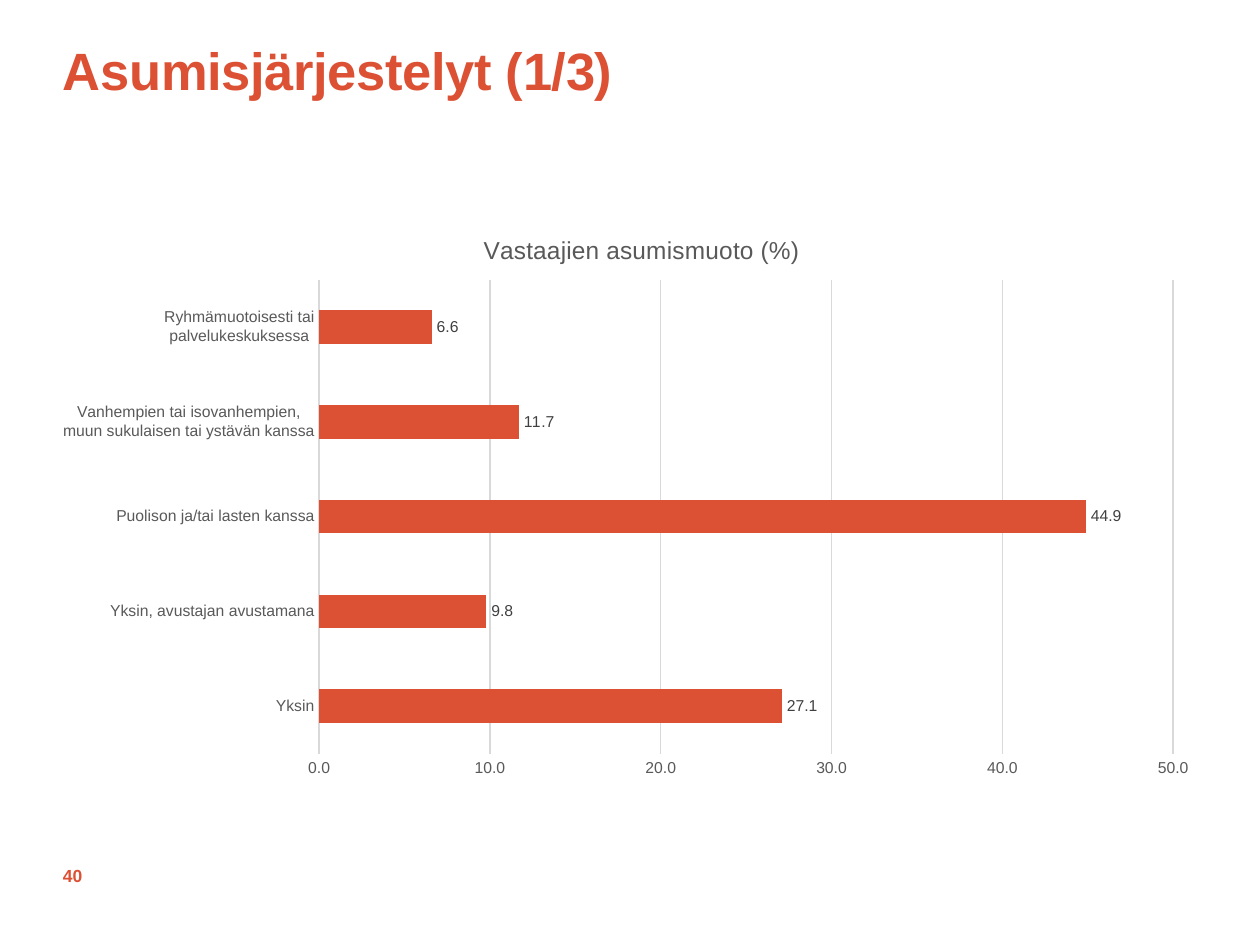
from lxml.etree import SubElement
from pptx import Presentation
from pptx.chart.data import CategoryChartData
from pptx.dml.color import RGBColor
from pptx.enum.chart import XL_CHART_TYPE, XL_LABEL_POSITION, XL_TICK_MARK
from pptx.enum.text import MSO_ANCHOR
from pptx.oxml import parse_xml
from pptx.oxml.ns import nsdecls, qn
from pptx.util import Cm, Pt

ORANGE = RGBColor(0xDC, 0x50, 0x34)
BLACK = RGBColor(0, 0, 0)
DARK_GREY = RGBColor(0x40, 0x40, 0x40)
GREY = RGBColor(0x59, 0x59, 0x59)
LIGHT_GREY = RGBColor(0xD9, 0xD9, 0xD9)

HOUSING = [
    ("Yksin", 27.1),
    ("Yksin, avustajan avustamana", 9.8),
    ("Puolison ja/tai lasten kanssa", 44.9),
    ("Vanhempien tai isovanhempien, muun sukulaisen tai ystävän kanssa", 11.7),
    ("Ryhmämuotoisesti tai palvelukeskuksessa", 6.6),
]


def style_font(font, size, color, bold=False, name="Arial"):
    font.name = name
    font.size = Pt(size)
    font.bold = bold
    font.color.rgb = color


def add_text(tf, text, *, size, color, bold=False, spacing=None):
    """Write one run; spacing is in hundredths of a point."""
    r = tf.paragraphs[0].add_run()
    r.text = text
    style_font(r.font, size, color, bold)
    if spacing is not None:
        r.font._element.set("spc", str(spacing))


def place(parent, index, **fractions):
    """Fix a chart part at fractions of the chart area."""
    for old in parent.findall(qn("c:layout")):
        parent.remove(old)
    layout = parse_xml(f"<c:layout {nsdecls('c')}><c:manualLayout/></c:layout>")
    for tag, value in fractions.items():
        SubElement(layout[0], qn(f"c:{tag}")).set("val", str(value))
    parent.insert(index, layout)


class SlideBuilder:
    def __init__(self, prs):
        self.s = prs.slides.add_slide(prs.slide_layouts[6])

    def text_box(self, left, top, width, height, text,
                 anchor=MSO_ANCHOR.TOP, **style):
        sp = self.s.shapes.add_textbox(Cm(left), Cm(top), Cm(width), Cm(height))
        tf = sp.text_frame
        tf.word_wrap = True
        tf.vertical_anchor = anchor
        tf.margin_left = tf.margin_top = tf.margin_right = tf.margin_bottom = 0
        add_text(tf, text, **style)

    def bar_chart(self, left, top, width, height, title, rows):
        data = CategoryChartData(number_format="0.0")
        data.categories = [name for name, _ in rows]
        data.add_series("Series 1", [value for _, value in rows])
        chart = self.s.shapes.add_chart(
            XL_CHART_TYPE.BAR_CLUSTERED,
            Cm(left), Cm(top), Cm(width), Cm(height), data).chart
        style_font(chart.font, 10, BLACK)
        chart.has_legend = False
        add_text(chart.chart_title.text_frame, title, size=14, color=GREY)
        place(chart.chart_title._element, 1,
              xMode="edge", yMode="edge", x=0.36, y=0.04)
        place(chart._chartSpace.chart.plotArea, 0, layoutTarget="inner",
              xMode="edge", yMode="edge", x=0.22, y=0.125, w=0.747, h=0.815)
        self.style_axes(chart)
        self.style_bars(chart.plots[0])

    def style_axes(self, chart):
        for axis in (chart.category_axis, chart.value_axis):
            axis.major_tick_mark = axis.minor_tick_mark = XL_TICK_MARK.NONE
            style_font(axis.tick_labels.font, 9, GREY)
        values = chart.value_axis
        values.minimum_scale, values.maximum_scale = 0, 50
        values.major_unit = 10
        values.tick_labels.number_format = "0.0"
        values.tick_labels.number_format_is_linked = False
        values.format.line.fill.background()
        chart.category_axis.has_major_gridlines = False
        for line in (chart.category_axis.format.line,
                     values.major_gridlines.format.line):
            line.color.rgb = LIGHT_GREY
            line.width = Pt(0.75)

    def style_bars(self, plot):
        plot.gap_width = 182
        plot.vary_by_categories = False
        fill = plot.series[0].format.fill
        fill.solid()
        fill.fore_color.rgb = ORANGE
        labels = plot.series[0].data_labels
        labels.show_value = True
        labels.number_format = "0.0"
        labels.number_format_is_linked = False
        labels.position = XL_LABEL_POSITION.OUTSIDE_END
        style_font(labels.font, 9, DARK_GREY)


def main():
    prs = Presentation()
    prs.slide_width, prs.slide_height = Cm(25.4), Cm(19.05)
    slide = SlideBuilder(prs)
    slide.text_box(1.27, 0.76, 22.86, 2.95, "Asumisjärjestelyt (1/3)",
                   size=30, color=ORANGE, bold=True, spacing=-20)
    slide.bar_chart(1.27, 4.17, 23.14, 11.73,
                    "Vastaajien asumismuoto (%)", HOUSING)
    slide.text_box(1.27, 17.15, 1.8, 1.02, "40", anchor=MSO_ANCHOR.MIDDLE,
                   size=10, color=ORANGE, bold=True)
    prs.save("out.pptx")


if __name__ == "__main__":
    main()
